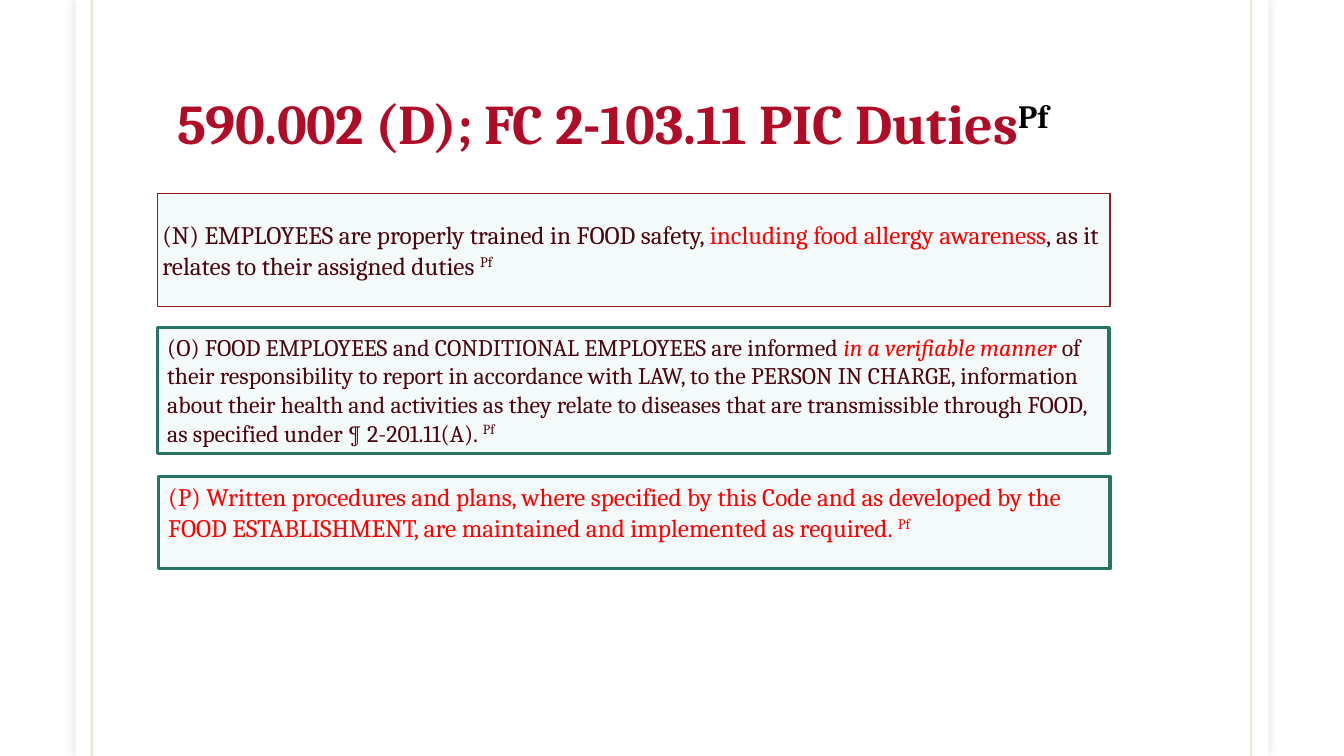
from dataclasses import dataclass

from lxml import etree
from pptx import Presentation
from pptx.dml.color import RGBColor
from pptx.enum import shapes, text
from pptx.oxml import ns
from pptx.util import Inches, Pt


@dataclass(frozen=True)
class Theme:
    """Colours, font and type sizes of the slide."""
    font: str = "Cambria"
    white: str = "FFFFFF"
    black: str = "000000"
    crimson: str = "B10C27"
    wine: str = "4D0511"
    red: str = "FF0000"
    mint: str = "D2EFEA"
    brick: str = "951F16"
    green: str = "287365"
    rule: str = "79540B"
    shadow: str = "65150F"
    title: float = 40
    body: float = 18
    compact: float = 17


T = Theme()


@dataclass(frozen=True)
class Span:
    """A stretch of text in one style."""
    text: str
    color: str
    italic: bool = False
    bold: bool = False
    raised: bool = False
    spacing: float = 0


@dataclass(frozen=True)
class Duty:
    """A bordered box holding one duty."""
    left: float
    top: float
    width: float
    height: float
    border: str
    weight: float
    size: float
    spans: tuple[Span, ...]
    anchor: text.MSO_ANCHOR = text.MSO_ANCHOR.TOP
    margins: tuple[float, float] = (0.1, 0.05)


TITLE = (
    Span("590.002 (D); FC ", T.crimson, bold=True, spacing=-0.3),
    Span("2-103.11 ", T.crimson, bold=True, spacing=-0.2),
    Span("PIC Duties", T.crimson, bold=True),
    Span("Pf", T.black, bold=True, raised=True),
)

DUTIES = (
    Duty(1.56, 1.92, 9.45, 1.12, T.brick, 1, T.body, (
        Span("(N) EMPLOYEES are properly trained in FOOD safety, ", T.wine),
        Span("including food allergy awareness", T.red),
        Span(", as it relates to their assigned duties ", T.wine),
        Span("Pf", T.wine, raised=True),
    ), text.MSO_ANCHOR.MIDDLE, (0.05, 0.02)),
    Duty(1.56, 3.25, 9.44, 1.25, T.green, 2.25, T.compact, (
        Span("(O) FOOD EMPLOYEES and CONDITIONAL EMPLOYEES are informed ", T.wine),
        Span("in a verifiable manner ", T.red, italic=True),
        Span("of their responsibility to report in accordance with LAW, to the "
             "PERSON IN CHARGE, information about their health and activities "
             "as they relate to diseases that are transmissible through FOOD, "
             "as specified under ¶ 2-201.11(A). ", T.wine),
        Span("Pf", T.wine, raised=True),
    )),
    Duty(1.57, 4.73, 9.44, 0.91, T.green, 2.25, T.body, (
        Span("(P) Written procedures and plans, where specified by this Code "
             "and as developed by the FOOD ESTABLISHMENT, are maintained and "
             "implemented as required. ", T.red),
        Span("Pf", T.red, raised=True),
    )),
)


def rgb(color: str) -> RGBColor:
    """Turn a hex string into a colour."""
    return RGBColor.from_string(color)


def set_alpha(element, percent: int) -> None:
    """Make the colours inside an element partly transparent."""
    for clr in element.iter(ns.qn("a:srgbClr")):
        etree.SubElement(clr, ns.qn("a:alpha"), val=str(percent * 1000))


def write(tf, spans: tuple[Span, ...], size: float, anchor: text.MSO_ANCHOR,
          margins: tuple[float, float] = (0.1, 0.05)):
    """Fill a text frame with styled spans and return its paragraph."""
    tf.word_wrap = True
    tf.vertical_anchor = anchor
    tf.margin_left = tf.margin_right = Inches(margins[0])
    tf.margin_top = tf.margin_bottom = Inches(margins[1])
    p = tf.paragraphs[0]
    p.alignment = text.PP_ALIGN.LEFT
    for span in spans:
        r = p.add_run()
        r.text = span.text
        r.font.name, r.font.size = T.font, Pt(size)
        r.font.bold, r.font.italic = span.bold, span.italic
        r.font.color.rgb = rgb(span.color)
        props = r._r.get_or_add_rPr()
        if span.raised:
            props.set("baseline", "30000")
        if span.spacing:
            props.set("spc", str(round(span.spacing * 100)))
    return p


def add_box(s, left: float, top: float, width: float, height: float, fill: str):
    """Add a plain filled rectangle without a shadow."""
    sp = s.shapes.add_shape(shapes.MSO_SHAPE.RECTANGLE, Inches(left), Inches(top),
                            Inches(width), Inches(height))
    sp.fill.solid()
    sp.fill.fore_color.rgb = rgb(fill)
    sp.shadow.inherit = False
    return sp


def add_page(s) -> None:
    """Add the white page with its soft glow and two edge rules."""
    sp = add_box(s, 0.75, 0, 11.83, 7.5, T.white)
    sp.line.fill.background()
    effects = sp._element.spPr.find(ns.qn("a:effectLst"))
    glow = etree.SubElement(effects, ns.qn("a:outerShdw"), blurRad=str(Pt(7)),
                            dist="0", dir="0", algn="ctr", rotWithShape="0")
    etree.SubElement(glow, ns.qn("a:srgbClr"), val=T.shadow)
    set_alpha(glow, 15)
    for x in (0.91, 12.41):
        rule = s.shapes.add_connector(shapes.MSO_CONNECTOR.STRAIGHT, Inches(x),
                                      Inches(0), Inches(x), Inches(7.5))
        rule.line.color.rgb = rgb(T.rule)
        rule.line.width = Pt(1.5)
        props = rule._element.spPr
        set_alpha(props, 15)
        etree.SubElement(props, ns.qn("a:effectLst"))


def add_title(s) -> None:
    """Add the slide title."""
    sp = s.shapes.add_textbox(Inches(1.66), Inches(0.35), Inches(10), Inches(1.25))
    p = write(sp.text_frame, TITLE, T.title, text.MSO_ANCHOR.BOTTOM)
    p.line_spacing = 0.85


def add_duty(s, duty: Duty) -> None:
    """Add one duty box."""
    sp = add_box(s, duty.left, duty.top, duty.width, duty.height, T.mint)
    set_alpha(sp._element.spPr, 25)
    sp.line.color.rgb = rgb(duty.border)
    sp.line.width = Pt(duty.weight)
    write(sp.text_frame, duty.spans, duty.size, duty.anchor, duty.margins)


def main() -> None:
    """Build and save the slide."""
    prs = Presentation()
    prs.slide_width, prs.slide_height = Inches(13.33), Inches(7.5)
    s = prs.slides.add_slide(prs.slide_layouts[6])
    add_page(s)
    add_title(s)
    for duty in DUTIES:
        add_duty(s, duty)
    prs.save("out.pptx")


if __name__ == "__main__":
    main()
